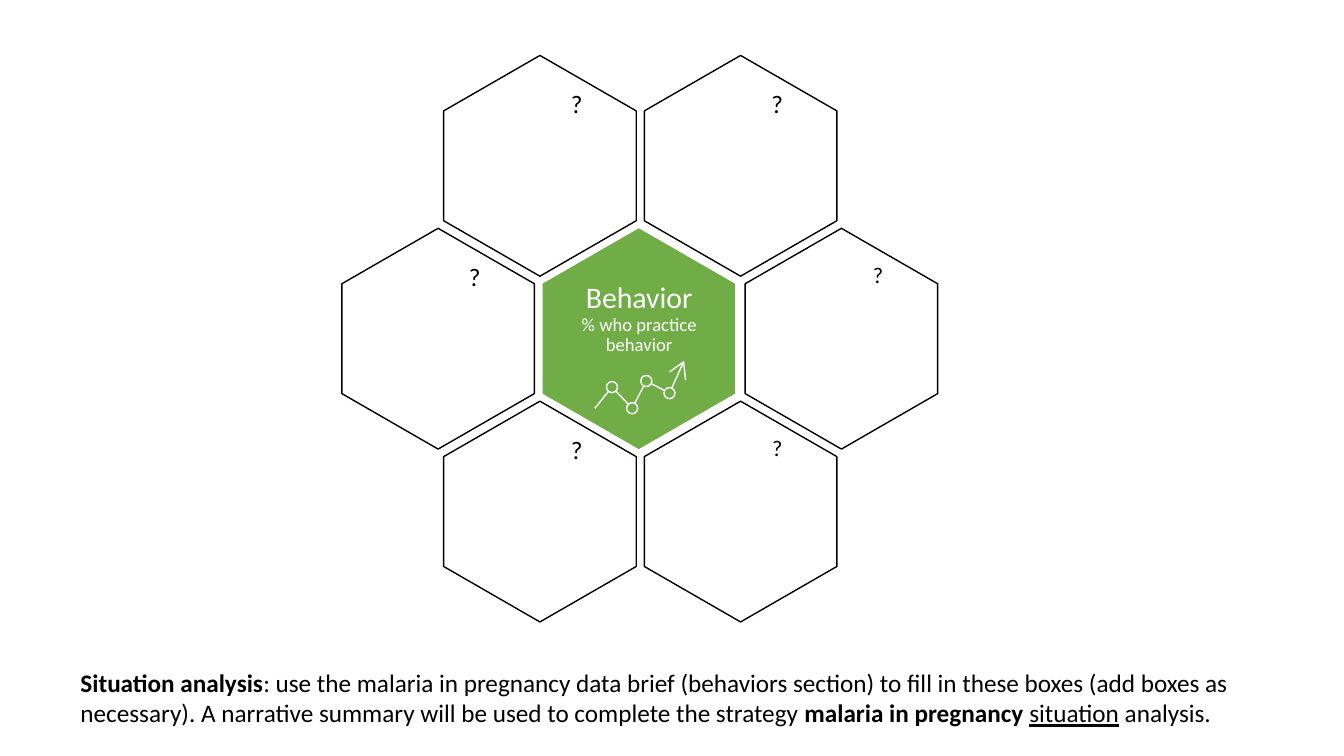
from math import hypot

from lxml.etree import SubElement
from pptx import Presentation
from pptx.dml.color import RGBColor
from pptx.enum.shapes import MSO_CONNECTOR as CONNECTOR, MSO_SHAPE as SHAPE
from pptx.enum.text import MSO_ANCHOR as ANCHOR, PP_ALIGN as ALIGN
from pptx.oxml.ns import qn
from pptx.util import Inches, Pt

BLACK = RGBColor(0x00, 0x00, 0x00)
WHITE = RGBColor(0xFF, 0xFF, 0xFF)
GREEN = RGBColor(0x70, 0xAD, 0x47)
FONT = "Calibri"

HEX_LENGTH, HEX_WIDTH = 2.19, 1.91
ROW_PITCH = 1.715
NODE_RADIUS = 0.055
# Column centre, row and question size of each empty box
QUESTIONS = [
    (5.355, -1, 18), (7.345, -1, 18),
    (4.345, 0, 18), (8.345, 0, 16),
    (5.355, 1, 18), (7.345, 1, 16),
]
CENTER_X, CENTER_Y = 6.335, 3.36
# Trend icon, measured from its top left corner
TREND_START, TREND_TIP = (0, 0.46), (0.88, 0)
TREND_NODES = [(0.17, 0.25), (0.37, 0.46), (0.51, 0.19), (0.74, 0.31)]
ARROW_BARBS = (0.9, 0.18), (0.74, 0.1)
SITUATION_RUNS = [
    ("Situation analysis", True, False),
    (": use the malaria in pregnancy data brief (behaviors section) to fill in "
     "these boxes (add boxes as necessary). A narrative summary will be used to "
     "complete the strategy ", False, False),
    ("malaria in pregnancy ", True, False),
    ("situation", False, True),
    (" analysis.", False, False),
]


def style_shape(shape, fill=None, line=None):
    shape.shadow.inherit = False
    if fill is None:
        shape.fill.background()
    else:
        shape.fill.solid()
        shape.fill.fore_color.rgb = fill
    if line is None:
        shape.line.fill.background()
    else:
        shape.line.color.rgb = line
        shape.line.width = Pt(1)


def style_font(font, size, color):
    font.name, font.size, font.color.rgb = FONT, Pt(size), color


def add_hexagon(slide, x, y, fill=None, line=None):
    """Upright hexagon centred on x, y."""
    hexagon = slide.shapes.add_shape(
        SHAPE.HEXAGON, Inches(x - HEX_LENGTH / 2), Inches(y - HEX_WIDTH / 2),
        Inches(HEX_LENGTH), Inches(HEX_WIDTH))
    hexagon.rotation = 90
    hexagon.adjustments[0] = 0.288
    style_shape(hexagon, fill, line)


def add_label(slide, left, top, width, lines, color):
    """Centred lines of text, shifted right by a wide left inset."""
    label = slide.shapes.add_textbox(
        Inches(left), Inches(top), Inches(width), Inches(1.46))
    frame = label.text_frame
    frame.word_wrap = True
    frame.vertical_anchor = ANCHOR.TOP
    frame.margin_left = Inches(0.73)
    frame.margin_top = frame.margin_right = frame.margin_bottom = 0
    frame.text = "\n".join(text for text, _ in lines)
    for paragraph, (_, size) in zip(frame.paragraphs, lines):
        paragraph.alignment = ALIGN.CENTER
        paragraph.line_spacing = 0.9
        style_font(paragraph.font, size, color)


def add_question_box(slide, x, y, size):
    add_hexagon(slide, x, y, line=BLACK)
    add_label(slide, x - 0.635, y - 0.735, 1.27, [("?", size)], BLACK)


def add_trend_icon(slide, left, top):
    icon = slide.shapes.add_group_shape().shapes

    def place(point):
        return Inches(left + point[0]), Inches(top + point[1])

    # Arrowhead
    barb, other_barb = ARROW_BARBS
    builder = icon.build_freeform(*place(barb))
    builder.add_line_segments([place(TREND_TIP), place(other_barb)], close=False)
    style_shape(builder.convert_to_shape(), line=WHITE)

    # Links stop at the rim of each node
    stops = [TREND_START, *TREND_NODES, TREND_TIP]
    for start, end in zip(stops, stops[1:]):
        dx, dy = end[0] - start[0], end[1] - start[1]
        trim = NODE_RADIUS / hypot(dx, dy)
        head = trim if start in TREND_NODES else 0
        tail = trim if end in TREND_NODES else 0
        link = icon.add_connector(
            CONNECTOR.STRAIGHT,
            *place((start[0] + dx * head, start[1] + dy * head)),
            *place((end[0] - dx * tail, end[1] - dy * tail)))
        link.line.color.rgb = WHITE
        link.line.width = Pt(1)
        SubElement(link._element.spPr, qn("a:effectLst"))

    # Nodes
    for x, y in TREND_NODES:
        node = icon.add_shape(
            SHAPE.OVAL, *place((x - NODE_RADIUS, y - NODE_RADIUS)),
            Inches(2 * NODE_RADIUS), Inches(2 * NODE_RADIUS))
        style_shape(node, line=WHITE)


def add_behavior_box(slide, x, y):
    add_hexagon(slide, x, y, fill=GREEN)
    add_label(slide, x - 1.355, y - 0.55, 1.99,
              [("Behavior", 21.3), ("% who practice behavior", 13.3)], WHITE)
    add_trend_icon(slide, x - 0.435, y + 0.23)


def add_situation_note(slide, left, top, width, height):
    note = slide.shapes.add_textbox(
        Inches(left), Inches(top), Inches(width), Inches(height))
    note.text_frame.word_wrap = True
    paragraph = note.text_frame.paragraphs[0]
    style_font(paragraph.font, 18, BLACK)
    for text, bold, underline in SITUATION_RUNS:
        run = paragraph.add_run()
        run.text = text
        run.font.bold = bold
        run.font.underline = underline


def main():
    deck = Presentation()
    deck.slide_width, deck.slide_height = Inches(13.33), Inches(7.5)
    slide = deck.slides.add_slide(deck.slide_layouts[6])
    add_situation_note(slide, 0.7, 6.57, 12.16, 0.71)
    for x, row, size in QUESTIONS:
        add_question_box(slide, x, CENTER_Y + row * ROW_PITCH, size)
    add_behavior_box(slide, CENTER_X, CENTER_Y)
    deck.save("out.pptx")


if __name__ == "__main__":
    main()
